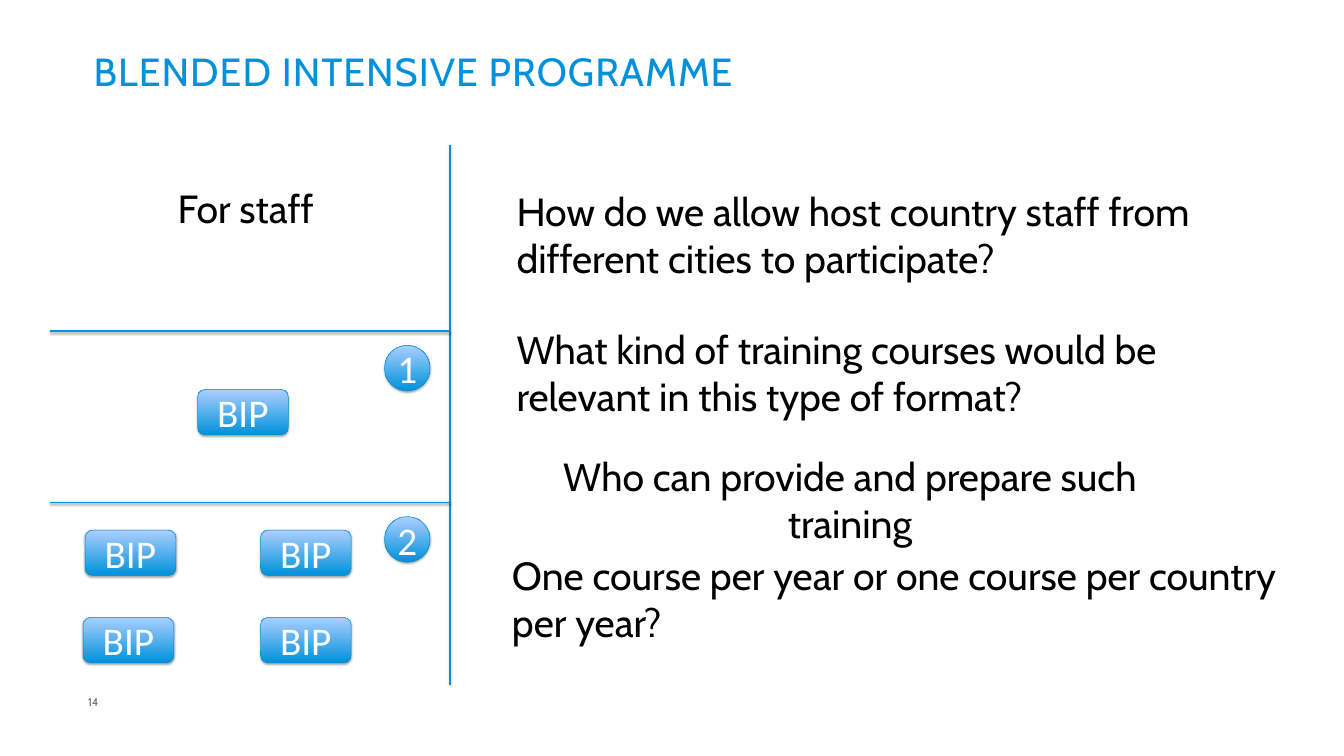
from dataclasses import dataclass

from lxml import etree
from pptx import Presentation
from pptx.dml.color import RGBColor
from pptx.enum.shapes import MSO_CONNECTOR, MSO_SHAPE
from pptx.enum.text import MSO_ANCHOR, MSO_AUTO_SIZE, PP_ALIGN
from pptx.oxml.ns import qn
from pptx.util import Cm, Pt

STRAIGHT = MSO_CONNECTOR.STRAIGHT
CIRCLE = MSO_SHAPE.OVAL
ROUNDED = MSO_SHAPE.ROUNDED_RECTANGLE
TOP, MIDDLE = MSO_ANCHOR.TOP, MSO_ANCHOR.MIDDLE
LEFT, CENTER = PP_ALIGN.LEFT, PP_ALIGN.CENTER
NO_FIT, GROW = MSO_AUTO_SIZE.NONE, MSO_AUTO_SIZE.SHAPE_TO_FIT_TEXT
TITLE_ONLY = 5


@dataclass(frozen=True)
class Theme:
    """Colours, fonts and type sizes of the slide."""
    accent: RGBColor = RGBColor(0x00, 0x91, 0xDA)
    light: RGBColor = RGBColor(0xAB, 0xCF, 0xFF)
    outline: RGBColor = RGBColor(0x00, 0x8E, 0xD5)
    black: RGBColor = RGBColor(0, 0, 0)
    white: RGBColor = RGBColor(0xFF, 0xFF, 0xFF)
    gray: RGBColor = RGBColor(0x5B, 0x67, 0x70)
    text_font: str = "Cabin"
    badge_font: str = "Calibri"
    text_size: Pt = Pt(56)
    number_size: Pt = Pt(16)


@dataclass(frozen=True)
class Box:
    """A region in centimetres."""
    left: float
    top: float
    width: float
    height: float

    def inner(self, left, top, width, height):
        """Return a box placed relative to this one."""
        return Box(self.left + left, self.top + top, width, height)

    def lengths(self):
        """Return left, top, width and height as lengths."""
        return Cm(self.left), Cm(self.top), Cm(self.width), Cm(self.height)


THEME = Theme()


def write(shape, text, color, font=THEME.text_font, size=THEME.text_size,
          align=LEFT, anchor=TOP):
    """Put one formatted paragraph into a shape and return its run."""
    frame = shape.text_frame
    frame.text = text
    frame.word_wrap = True
    frame.vertical_anchor = anchor
    paragraph = frame.paragraphs[0]
    paragraph.alignment = align
    run = paragraph.runs[0]
    run.font.name = font
    run.font.size = size
    run.font.color.rgb = color
    return run


def add_text(slide, box, text, align=LEFT, wrap=True):
    """Add a black text box that grows with its text."""
    shape = slide.shapes.add_textbox(*box.lengths())
    write(shape, text, THEME.black, align=align)
    shape.text_frame.word_wrap = wrap
    shape.text_frame.auto_size = GROW


def add_shadow(shape, distance, opacity):
    """Give a shape a soft black shadow below it."""
    effects = etree.SubElement(shape.element.spPr, qn("a:effectLst"))
    shadow = etree.SubElement(effects, qn("a:outerShdw"), blurRad=str(Pt(3.1)),
                              dist=str(Pt(distance)), dir="5400000", rotWithShape="0")
    color = etree.SubElement(shadow, qn("a:srgbClr"), val=str(THEME.black))
    etree.SubElement(color, qn("a:alpha"), val=str(opacity * 1000))


def add_rule(slide, box):
    """Draw a line from the top left to the bottom right of a box."""
    left, top, width, height = box.lengths()
    line = slide.shapes.add_connector(STRAIGHT, left, top, left + width, top + height)
    line.line.color.rgb = THEME.accent
    line.line.width = Pt(2)
    add_shadow(line, 1.6, 38)


def add_badge(slide, kind, box, text):
    """Add a gradient badge with a white label."""
    badge = slide.shapes.add_shape(kind, *box.lengths())
    badge.fill.gradient()
    badge.fill.gradient_angle = 90
    for stop, color in zip(badge.fill.gradient_stops, (THEME.accent, THEME.light)):
        stop.color.rgb = color
    badge.line.color.rgb = THEME.outline
    badge.line.width = Pt(0.75)
    add_shadow(badge, 1.8, 35)
    write(badge, text, THEME.white, THEME.badge_font, align=CENTER, anchor=MIDDLE)


def add_title(slide, box):
    """Fill and place the title placeholder."""
    title = slide.shapes.title
    title.left, title.top, title.width, title.height = box.lengths()
    run = write(title, "BLENDED INTENSIVE PROGRAMME", THEME.accent)
    run.font._element.set("spc", "150")
    title.text_frame.auto_size = NO_FIT


def add_option(slide, box, number, programmes):
    """Add one numbered row with a rule on top and its programmes."""
    add_rule(slide, box.inner(0, 0, box.width, 0))
    add_badge(slide, CIRCLE, box.inner(16.84, 0.72, 2.29, 2.29), number)
    for left, top in programmes:
        add_badge(slide, ROUNDED, box.inner(left, top, 4.57, 2.29), "BIP")


def add_staff_panel(slide, box):
    """Build the left panel: heading, divider and two options."""
    add_text(slide, box.inner(-0.23, 1.85, box.width, 2.64), "For staff", CENTER)
    add_rule(slide, box.inner(box.width, 0, 0, box.height))
    add_option(slide, box.inner(0, 9.4, box.width, 8.63), "1", [(7.42, 2.94)])
    add_option(slide, box.inner(0, 18.03, box.width, 9.2), "2",
               [(1.75, 1.4), (1.65, 5.8), (10.59, 1.4), (10.59, 5.8)])


def add_questions(slide, box):
    """Build the right panel with the four questions."""
    questions = [
        (0.74, 0, 39.27, "How do we allow host country staff from different cities to participate?"),
        (0.74, 6.96, 39.27, "What kind of training courses would be relevant in this type of format?"),
        (0.51, 18.32, 39.5, "One course per year or one course per country per year?"),
    ]
    for left, top, width, text in questions:
        add_text(slide, box.inner(left, top, width, 5.54), text)
    add_text(slide, box.inner(0, 13.34, 35.59, 2.64),
             "Who can provide and prepare such training", CENTER, wrap=False)


def add_slide_number(slide, box):
    """Add the page number."""
    shape = slide.shapes.add_textbox(*box.lengths())
    write(shape, "14", THEME.gray, size=THEME.number_size, anchor=MIDDLE)


def main():
    """Build and save the slide."""
    presentation = Presentation()
    presentation.slide_width = Cm(67.73)
    presentation.slide_height = Cm(38.1)
    slide = presentation.slides.add_slide(presentation.slide_layouts[TITLE_ONLY])
    add_title(slide, Box(4.47, 2.26, 58.57, 2.39))
    add_staff_panel(slide, Box(2.54, 7.29, 20.14, 27.23))
    add_questions(slide, Box(25.04, 9.32, 40.01, 23.86))
    add_slide_number(slide, Box(4.19, 34.52, 2, 1.75))
    presentation.save("out.pptx")


if __name__ == "__main__":
    main()
